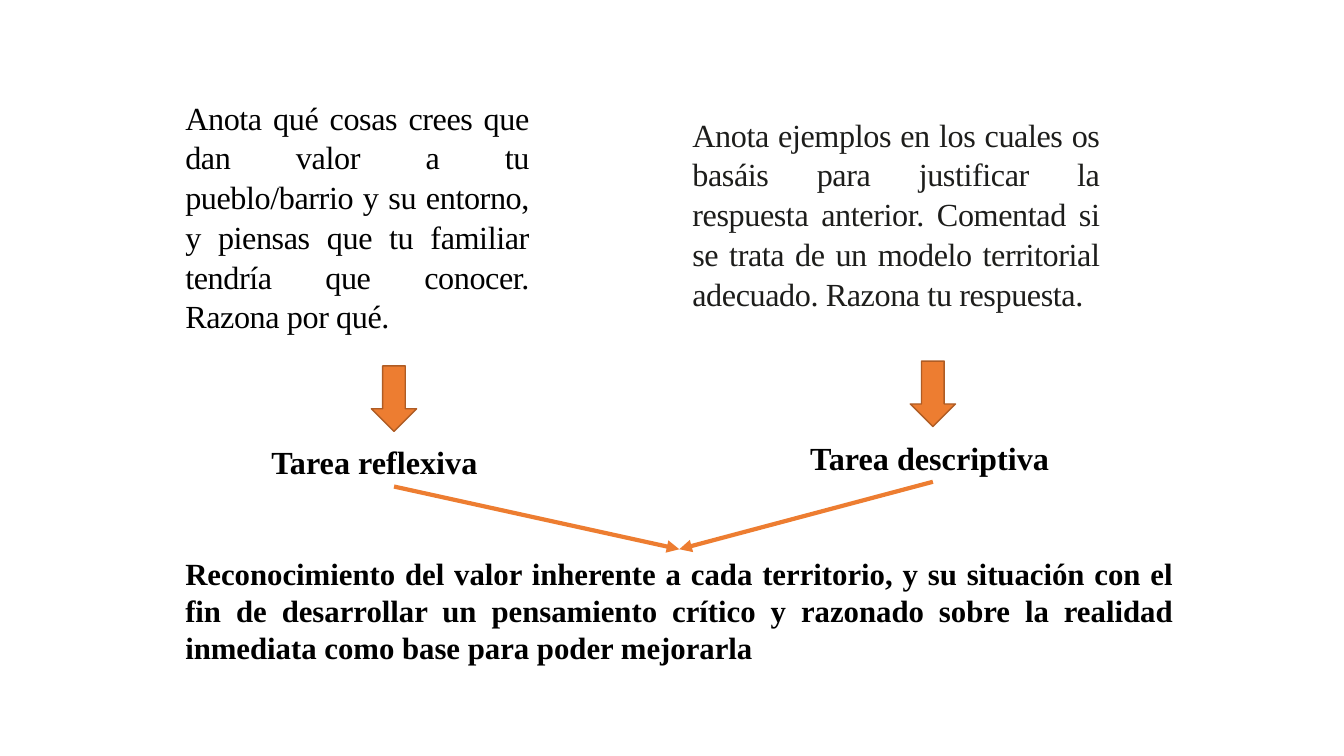
from pptx import Presentation
from pptx.dml.color import RGBColor
from pptx.enum.shapes import MSO_CONNECTOR as Connector, MSO_SHAPE as Preset
from pptx.enum.text import MSO_ANCHOR as Anchor, PP_ALIGN as Align
from pptx.oxml.ns import qn
from pptx.util import Cm, Pt
from lxml.etree import SubElement

BLACK = RGBColor(0x00, 0x00, 0x00)
CHARCOAL = RGBColor(0x1D, 0x1D, 0x1B)
ORANGE = RGBColor(0xED, 0x7D, 0x31)
BROWN = RGBColor(0xAF, 0x5C, 0x24)
FONT = "Times New Roman"

REFLECTIVE = (
    "Anota qué cosas crees que dan valor a tu pueblo/barrio y su entorno, "
    "y piensas que tu familiar tendría que conocer. Razona por qué."
)
DESCRIPTIVE = (
    "Anota ejemplos en los cuales os basáis para justificar la respuesta anterior. "
    "Comentad si se trata de un modelo territorial adecuado. Razona tu respuesta."
)
CONCLUSION = (
    "Reconocimiento del valor inherente a cada territorio, y su situación con el fin "
    "de desarrollar un pensamiento crítico y razonado sobre la realidad inmediata "
    "como base para poder mejorarla"
)


def add_text(page, box, text, size=23, color=BLACK, bold=False):
    """Place justified text in a box of (left, top, width, height) in cm and return its shape."""
    shape = page.shapes.add_textbox(*map(Cm, box))
    frame = shape.text_frame
    frame.text = text
    frame.word_wrap = True
    frame.vertical_anchor = Anchor.MIDDLE
    para = frame.paragraphs[0]
    para.alignment = Align.JUSTIFY
    font = para.runs[0].font
    font.name, font.size, font.bold = FONT, Pt(size), bold
    font.color.rgb = color
    return shape


def add_question(page, box, text, color):
    """Place a tightly spaced question with a wide right margin in its box."""
    shape = add_text(page, box, text, color=color)
    shape.text_frame.margin_right = Cm(2.1)
    para = shape.text_frame.paragraphs[0]
    para.line_spacing = 1.03
    para.runs[0].font._element.set("spc", "-30")


def add_task(page, center, top, label, target):
    """Stack a down arrow and a task label on a centre line and link them to the target."""
    arrow_width, label_width, label_height = 1.14, 6.68, 1.24
    label_top = top + 1.8
    arrow = page.shapes.add_shape(
        Preset.DOWN_ARROW, Cm(center - arrow_width / 2), Cm(top), Cm(arrow_width), Cm(1.65)
    )
    arrow.shadow.inherit = False
    arrow.fill.solid()
    arrow.fill.fore_color.rgb = ORANGE
    arrow.line.color.rgb = BROWN
    arrow.line.width = Pt(1)
    label_box = (center - label_width / 2, label_top, label_width, label_height)
    add_text(page, label_box, label, bold=True)
    add_link(page, (center, label_top + label_height), target)


def add_link(page, start, end):
    """Draw an orange line with an arrowhead at its end."""
    link = page.shapes.add_connector(Connector.STRAIGHT, *map(Cm, start + end))
    link.line.color.rgb = ORANGE
    link.line.width = Pt(3)
    SubElement(link.line._get_or_add_ln(), qn("a:tailEnd"), type="triangle")
    SubElement(link._element.spPr, qn("a:effectLst"))


def main():
    """Build the slide and save the deck."""
    deck = Presentation()
    deck.slide_width, deck.slide_height = Cm(33.87), Cm(19.05)
    page = deck.slides.add_slide(deck.slide_layouts[6])

    left, top, width, height = conclusion_box = (4.42, 13.84, 25.4, 3.07)
    target = (left + width / 2, top)
    add_question(page, (17.2, 2.74, 12.62, 5.26), DESCRIPTIVE, CHARCOAL)
    add_question(page, (left, 2.31, 11.02, 6.27), REFLECTIVE, BLACK)
    add_task(page, 9.93, 9.22, "Tarea reflexiva", target)
    add_task(page, 23.51, 9.1, "Tarea descriptiva", target)
    add_text(page, conclusion_box, CONCLUSION, size=22, bold=True)
    deck.save("out.pptx")


if __name__ == "__main__":
    main()
